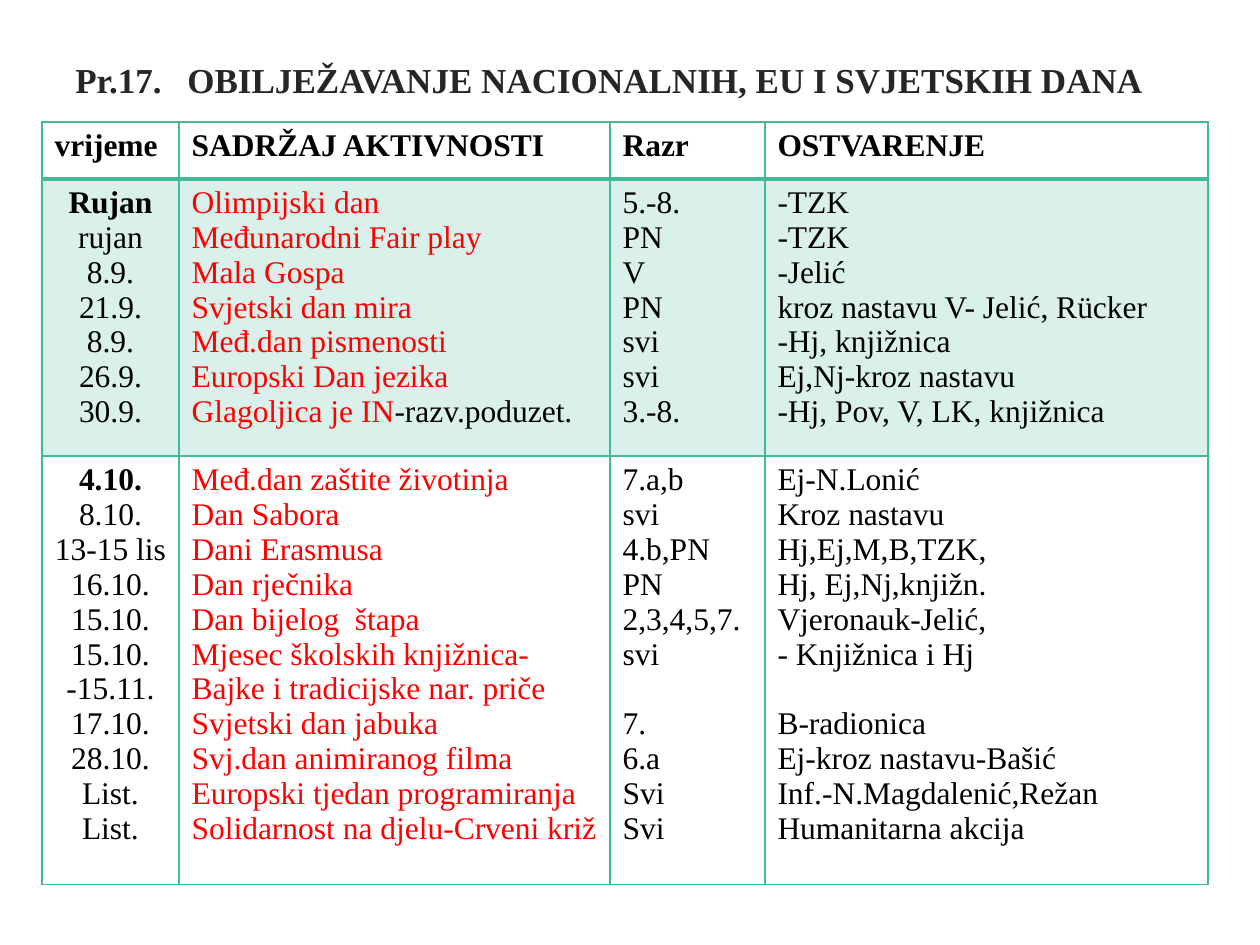
from dataclasses import dataclass

from lxml.etree import SubElement as Sub
from pptx import Presentation
from pptx.dml.color import RGBColor as Rgb
from pptx.enum.text import MSO_ANCHOR as Anchor, PP_ALIGN as Align
from pptx.oxml.ns import qn
from pptx.util import Emu, Pt


@dataclass(frozen=True)
class Theme:
    face: str = "Times New Roman"
    ink: str = "000000"
    dark: str = "262626"
    red: str = "FF0000"
    green: str = "42BA97"
    tint: int = 20
    head: int = 20
    body: int = 18
    line: int = 20  # height of one body line in points


def px(n):
    return Emu(round(n * 914400 / 126))


class Page:
    def __init__(self, deck, theme):
        self.theme = theme
        self.slide = deck.slides.add_slide(deck.slide_layouts[6])

    def style(self, font, size, color, bold=False):
        font.name = self.theme.face
        font.size = Pt(size)
        font.bold = bold
        font.color.rgb = Rgb.from_string(color)

    def title(self, box, text, stop):
        frame = self.slide.shapes.add_textbox(*map(px, box)).text_frame
        frame.word_wrap = True
        frame.vertical_anchor = Anchor.MIDDLE
        par = frame.paragraphs[0]
        par.text = text
        par.line_spacing = 0.9
        tabs = Sub(par._p.get_or_add_pPr(), qn("a:tabLst"))
        Sub(tabs, qn("a:tab"), pos=str(px(stop)), algn="l")
        self.style(par.font, self.theme.head, self.theme.dark, True)

    def edges(self, cell, base):
        """Draw the four cell borders; base is the bottom width in points."""
        props = cell._tc.get_or_add_tcPr()
        for side, width in zip("LRTB", (1, 1, 1, base)):
            line = Sub(props, qn("a:ln" + side), w=str(Pt(width)))
            fill = Sub(line, qn("a:solidFill"))
            Sub(fill, qn("a:srgbClr"), val=self.theme.green)

    def shade(self, cell, tinted):
        if not tinted:
            cell.fill.background()
            return
        cell.fill.solid()
        cell.fill.fore_color.rgb = Rgb.from_string(self.theme.green)
        color = cell._tc.tcPr.find(qn("a:solidFill")).find(qn("a:srgbClr"))
        Sub(color, qn("a:alpha"), val=str(self.theme.tint * 1000))

    def lines(self, cell, texts, color, align, bold):
        """Fill a cell; None leaves one line free, a pair ends in plain ink."""
        frame = cell.text_frame
        par, gap = frame.paragraphs[0], 0
        for n, text in enumerate(texts):
            if text is None:
                gap = self.theme.line
                continue
            if n:
                par = frame.add_paragraph()
            par.alignment = align
            par.space_before = Pt(gap)
            gap = 0
            parts = (text,) if isinstance(text, str) else text
            for part in parts:
                par.add_run().text = part
            # Row heights are measured from the runs, so they carry the font too.
            for item in (par, *par.runs):
                self.style(item.font, self.theme.body, color, n == 0 and bold)
            for tail in par.runs[1:]:
                tail.font.color.rgb = Rgb.from_string(self.theme.ink)

    def table(self, left, top, widths, heights, rows):
        shape = self.slide.shapes.add_table(
            len(rows), len(widths), px(left), px(top),
            px(sum(widths)), px(sum(heights)))
        grid = shape.table
        grid.first_row = grid.horz_banding = False
        for col, width in zip(grid.columns, widths):
            col.width = px(width)
        for r, (row, height) in enumerate(zip(rows, heights)):
            grid.rows[r].height = px(height)
            for c, texts in enumerate(row):
                cell = grid.cell(r, c)
                self.edges(cell, 2 if r == 0 else 1)
                self.shade(cell, r == 1)
                color = self.theme.red if r and c == 1 else self.theme.ink
                align = Align.CENTER if r and c == 0 else Align.LEFT
                self.lines(cell, texts, color, align, r == 0 or c == 0)


HEADS = [["vrijeme"], ["SADRŽAJ AKTIVNOSTI"], ["Razr"], ["OSTVARENJE"]]
SEPT = [
    ["Rujan", "rujan", "8.9.", "21.9.", "8.9.", "26.9.", "30.9."],
    ["Olimpijski dan", "Međunarodni Fair play", "Mala Gospa",
     "Svjetski dan mira", "Međ.dan pismenosti", "Europski Dan jezika",
     ("Glagoljica je IN", "-razv.poduzet.")],
    ["5.-8.", "PN", "V", "PN", "svi", "svi", "3.-8."],
    ["-TZK", "-TZK", "-Jelić", "kroz nastavu V- Jelić, Rücker",
     "-Hj, knjižnica", "Ej,Nj-kroz nastavu", "-Hj, Pov, V, LK, knjižnica"],
]
OCT = [
    ["4.10.", "8.10.", "13-15 lis", "16.10.", "15.10.", "15.10.", "-15.11.",
     "17.10.", "28.10.", "List.", "List."],
    ["Međ.dan zaštite životinja", "Dan Sabora", "Dani Erasmusa",
     "Dan rječnika", "Dan bijelog  štapa",
     "Mjesec školskih knjižnica- Bajke i tradicijske nar. priče",
     "Svjetski dan jabuka", "Svj.dan animiranog filma",
     "Europski tjedan programiranja", "Solidarnost na djelu-Crveni križ"],
    ["7.a,b", "svi", "4.b,PN", "PN", "2,3,4,5,7.", "svi", None,
     "7.", "6.a", "Svi", "Svi"],
    ["Ej-N.Lonić", "Kroz nastavu", "Hj,Ej,M,B,TZK,", "Hj, Ej,Nj,knjižn.",
     "Vjeronauk-Jelić,", "- Knjižnica i Hj", None, "B-radionica",
     "Ej-kroz nastavu-Bašić", "Inf.-N.Magdalenić,Režan",
     "Humanitarna akcija"],
]


def main():
    deck = Presentation()
    deck.slide_width, deck.slide_height = px(1260), px(945)
    page = Page(deck, Theme())
    page.title((63, 38, 1134, 88),
               "Pr.17.\tOBILJEŽAVANJE NACIONALNIH, EU I SVJETSKIH DANA", 112)
    page.table(42, 122, (137, 431, 155, 443), (57, 256, 396),
               [HEADS, SEPT, OCT])
    deck.save("out.pptx")


if __name__ == "__main__":
    main()
